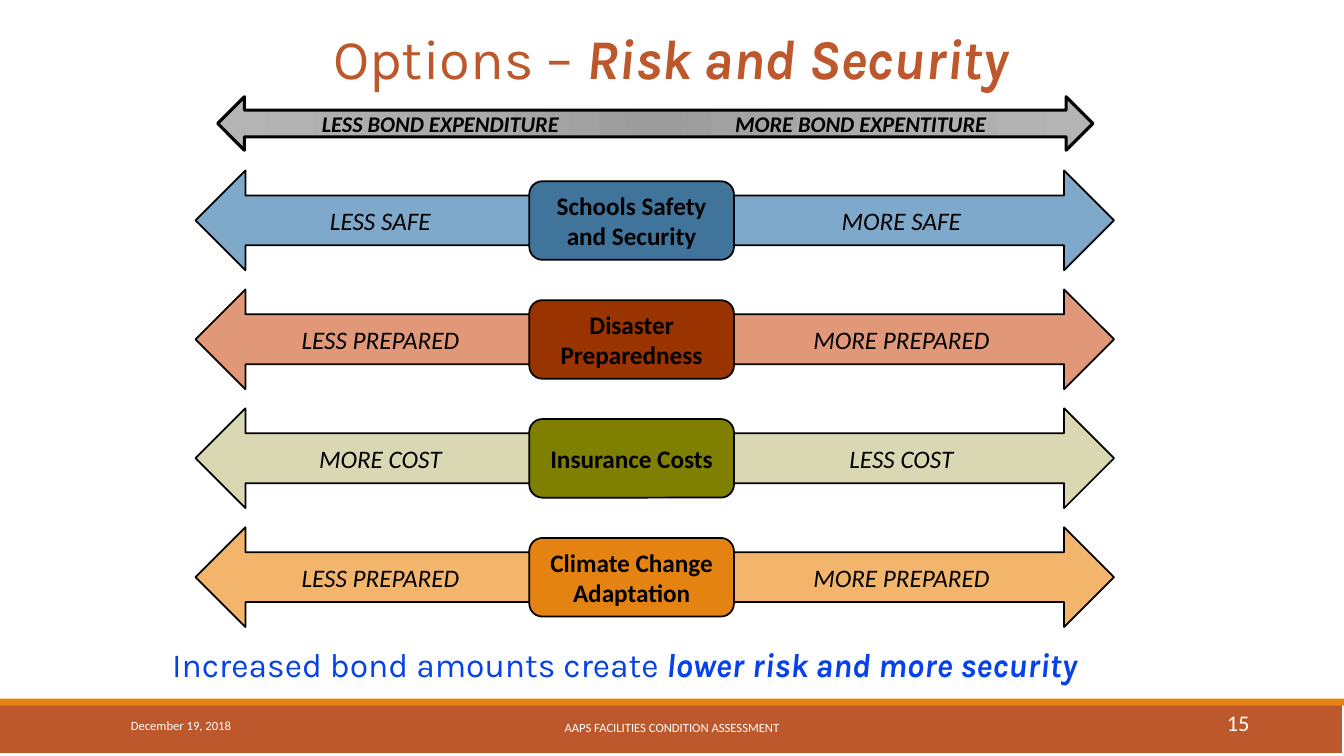
from dataclasses import dataclass

from lxml.etree import SubElement
from pptx import Presentation
from pptx.dml.color import RGBColor
from pptx.enum.shapes import MSO_SHAPE
from pptx.enum.text import MSO_ANCHOR, PP_ALIGN
from pptx.oxml import parse_xml
from pptx.oxml.ns import nsdecls, qn
from pptx.util import Inches, Pt

WIDTH, HEIGHT = Inches(13.33), Inches(7.5)
RUST, ORANGE, BLACK, WHITE, BLUE = "BD582C", "E48312", "000000", "FFFFFF", "0642EA"
ROW_TOP, ROW_PITCH, HUB_DROP = 22.55, 15.73, 1.42


@dataclass(frozen=True)
class Box:
    left: float
    top: float
    width: float
    height: float

    def emu(self) -> tuple[int, int, int, int]:
        return (int(WIDTH * self.left / 100), int(HEIGHT * self.top / 100),
                int(WIDTH * self.width / 100), int(HEIGHT * self.height / 100))


@dataclass(frozen=True)
class Scale:
    less: str
    topic: str
    more: str
    pale: str
    strong: str


@dataclass(frozen=True)
class Label:
    text: str
    box: Box
    size: float
    align: PP_ALIGN


SCALES = [
    Scale("LESS SAFE", "Schools Safety and Security", "MORE SAFE", "7EA9CA", "40749B"),
    Scale("LESS PREPARED", "Disaster Preparedness", "MORE PREPARED", "E09878", "993300"),
    Scale("MORE COST", "Insurance Costs", "LESS COST", "DAD7B3", "808000"),
    Scale("LESS PREPARED", "Climate Change Adaptation", "MORE PREPARED", "F3B56C", ORANGE),
]

FOOTER = [
    Label("December 19, 2018", Box(9, 93.33, 20.26, 5.33), 9, PP_ALIGN.LEFT),
    Label("AAPS FACILITIES CONDITION ASSESSMENT", Box(30.23, 93.6, 39.53, 5.33), 9,
          PP_ALIGN.CENTER),
    Label("15", Box(82.97, 92.93, 10.73, 5.33), 16, PP_ALIGN.RIGHT),
]


def rgb(color: str) -> RGBColor:
    return RGBColor.from_string(color)


def write(sp, text, emphasis="", *, size=18, font="Calibri", color=BLACK, bold=False,
          italic=False, align=PP_ALIGN.CENTER, anchor=MSO_ANCHOR.MIDDLE, spacing=1.0):
    tf = sp.text_frame
    tf.word_wrap = True
    tf.vertical_anchor = anchor
    p = tf.paragraphs[0]
    p.alignment = align
    p.line_spacing = spacing
    for part, strong in ((text, False), (emphasis, True)):
        if part:
            r = p.add_run()
            r.text = part
            r.font.size = Pt(size)
            r.font.name = font
            r.font.bold = bold or strong
            r.font.italic = italic or strong
            r.font.color.rgb = rgb(color)
    return p


def add_text(slide, box: Box, text: str, emphasis: str = "", **style):
    return write(slide.shapes.add_textbox(*box.emu()), text, emphasis, **style)


def add_block(slide, kind: MSO_SHAPE, box: Box, fill: str, line: float = 0):
    sp = slide.shapes.add_shape(kind, *box.emu())
    sp.shadow.inherit = False
    sp.fill.solid()
    sp.fill.fore_color.rgb = rgb(fill)
    if line:
        sp.line.color.rgb = rgb(BLACK)
        sp.line.width = Pt(line)
    else:
        sp.line.fill.background()
    return sp


def add_scale(slide, scale: Scale, top: float) -> None:
    parts = [
        (MSO_SHAPE.LEFT_ARROW, Box(14.55, top, 25.66, 13.2), scale.pale, scale.less),
        (MSO_SHAPE.RIGHT_ARROW, Box(53.11, top, 29.78, 13.2), scale.pale, scale.more),
        (MSO_SHAPE.ROUNDED_RECTANGLE, Box(39.38, top + HUB_DROP, 15.23, 10.4),
         scale.strong, scale.topic),
    ]
    for kind, box, fill, text in parts:
        is_hub = kind == MSO_SHAPE.ROUNDED_RECTANGLE
        write(add_block(slide, kind, box, fill, 1.25), text, bold=is_hub, italic=not is_hub)


def add_expenditure(slide) -> None:
    sp = add_block(slide, MSO_SHAPE.LEFT_RIGHT_ARROW, Box(16.2, 12.8, 65.12, 7.07),
                   "AAAAAA", 2.25)
    stops = "".join(f'<a:gs pos="{pos * 1000}"><a:srgbClr val="{color}"/></a:gs>'
                    for pos, color in ((0, "9C9C9C"), (45, "AAAAAA"), (100, "B4B4B4")))
    grad = parse_xml(
        f'<a:gradFill {nsdecls("a")} rotWithShape="1"><a:gsLst>{stops}</a:gsLst>'
        '<a:path path="circle"><a:fillToRect l="50000" t="50000" r="50000" b="50000"/>'
        '</a:path></a:gradFill>')
    spPr = sp._element.spPr
    spPr.replace(spPr.find(qn("a:solidFill")), grad)
    tf = sp.text_frame
    tf.margin_left = Inches(0.9)
    tf.margin_right = tf.margin_top = tf.margin_bottom = 0
    p = write(sp, "LESS BOND EXPENDITURE\tMORE BOND EXPENTITURE", size=16, bold=True,
              italic=True, align=PP_ALIGN.LEFT)
    tabs = SubElement(p._p.get_or_add_pPr(), qn("a:tabLst"))
    SubElement(tabs, qn("a:tab"), pos=str(Inches(4.1)), algn="l")


def main() -> None:
    prs = Presentation()
    prs.slide_width, prs.slide_height = WIDTH, HEIGHT
    slide = prs.slides.add_slide(prs.slide_layouts[6])
    add_block(slide, MSO_SHAPE.RECTANGLE, Box(-0.15, 92.93, 100, 6.67), RUST)
    add_block(slide, MSO_SHAPE.RECTANGLE, Box(0, 92.4, 100, 0.93), ORANGE)
    add_text(slide, Box(1.13, 2.93, 97.52, 10.67), "Options – ", "Risk and Security",
             size=40, font="Karla", color=RUST, spacing=0.85)
    for label in FOOTER:
        add_text(slide, label.box, label.text, size=label.size, color=WHITE,
                 align=label.align)
    add_text(slide, Box(12.08, 84.53, 76.29, 6.67), "Increased bond amounts create",
             " lower risk and more security", size=24, font="Karla", color=BLUE,
             align=PP_ALIGN.LEFT, anchor=MSO_ANCHOR.TOP)
    for i, scale in enumerate(SCALES):
        add_scale(slide, scale, ROW_TOP + i * ROW_PITCH)
    add_expenditure(slide)
    prs.save("out.pptx")


if __name__ == "__main__":
    main()
